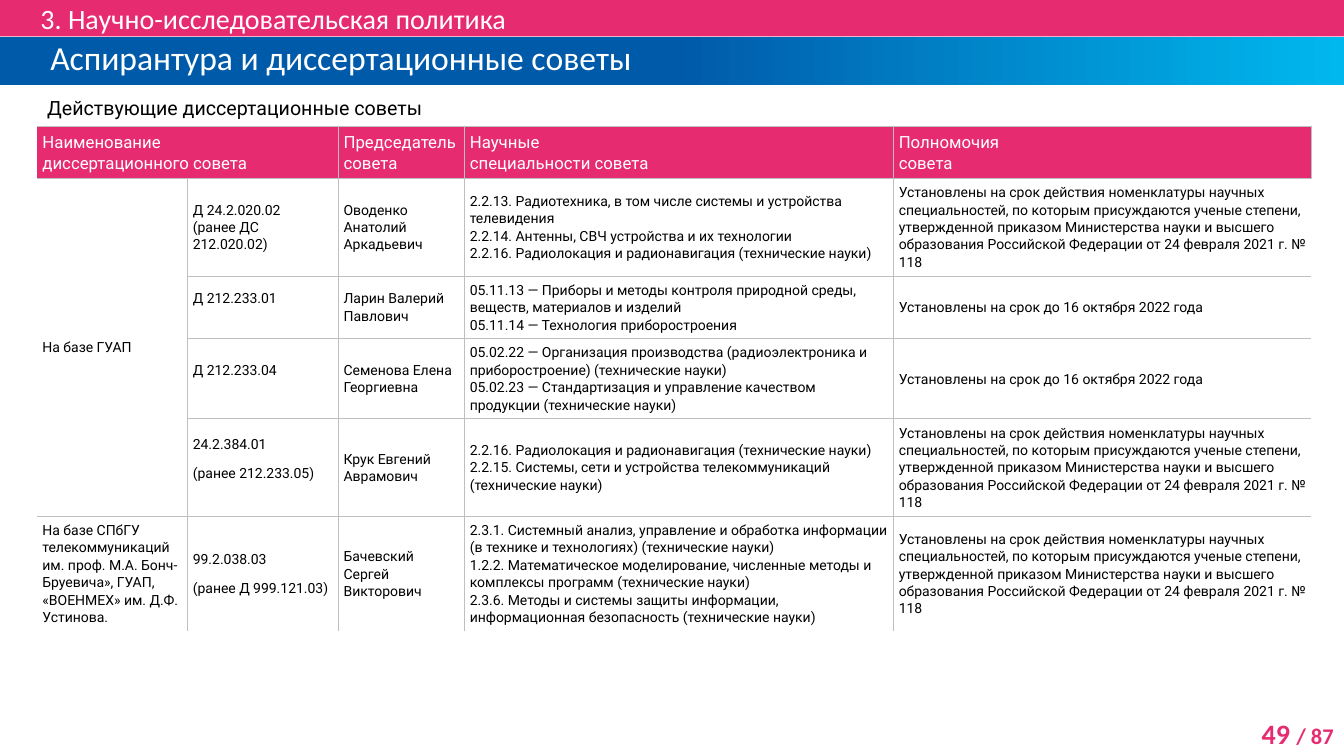
import copy
import pptx
import pptx.dml.color
import pptx.enum.shapes
import pptx.enum.text
import pptx.oxml
import pptx.oxml.ns
import pptx.util
from pptx.util import Cm, Pt


class Theme:
    pink, blue, sky = "E72B70", "005AAA", "00B8EE"
    white, black, grid = "FFFFFF", "000000", "BFBFBF"
    heading, body = "Calibri", "Roboto"
    title, section, total, caption, header, cell = 24, 20, 16, 14, 12, 10


rgb = pptx.dml.color.RGBColor.from_string
qn = pptx.oxml.ns.qn
MIDDLE = pptx.enum.text.MSO_ANCHOR.MIDDLE
ALIGN = pptx.enum.text.PP_ALIGN


def add_run(p, text, size, color, font, bold=False):
    r = p.add_run()
    r.text = text
    r.font.size, r.font.name, r.font.bold = Pt(size), font, bold
    r.font.color.rgb = rgb(color)


def add_border(tc_pr, side, position):
    ns = pptx.oxml.ns.nsdecls("a")
    tc_pr.insert(position, pptx.oxml.parse_xml(
        f'<a:ln{side} {ns} w="{Pt(0.5)}"><a:solidFill><a:srgbClr val="{Theme.grid}"/>'
        f'</a:solidFill></a:ln{side}>'))


prs = pptx.Presentation()
prs.slide_width, prs.slide_height = Cm(33.87), Cm(19.05)
s = prs.slides.add_slide(prs.slide_layouts[5])

# Section bar
sp = s.shapes.add_shape(pptx.enum.shapes.MSO_SHAPE.RECTANGLE, 0, 0, prs.slide_width, Cm(0.92))
sp.shadow.inherit = False
sp.fill.solid()
sp.fill.fore_color.rgb = rgb(Theme.pink)
sp.line.fill.background()
tf = sp.text_frame
tf.word_wrap, tf.vertical_anchor = True, MIDDLE
tf.margin_left, tf.margin_right, tf.margin_top, tf.margin_bottom = Cm(1.02), 0, 0, 0
p = tf.paragraphs[0]
p.alignment = ALIGN.LEFT
add_run(p, "3. Научно-исследовательская политика", Theme.section, Theme.white, Theme.heading)

# Title on a gradient bar: solid blue up to the middle, then to sky blue
sp = s.shapes.title
sp.left, sp.top, sp.width, sp.height = 0, Cm(0.92), prs.slide_width, Cm(1.23)
sp.fill.gradient()
sp.fill.gradient_angle = 0
for stop, color in zip(sp.fill.gradient_stops, (Theme.blue, Theme.sky)):
    stop.color.rgb = rgb(color)
stops = sp._element.spPr.find(".//" + qn("a:gsLst"))
stops.insert(1, copy.deepcopy(stops[0]))
stops[1].set("pos", "50000")
tf = sp.text_frame
tf.auto_size = pptx.enum.text.MSO_AUTO_SIZE.NONE
tf.word_wrap, tf.vertical_anchor = True, MIDDLE
tf.margin_left, tf.margin_right, tf.margin_top, tf.margin_bottom = Cm(1.27), Cm(0.25), 0, 0
p = tf.paragraphs[0]
p.alignment, p.line_spacing = ALIGN.LEFT, Pt(24)
add_run(p, "Аспирантура и диссертационные советы", Theme.title, Theme.white, Theme.heading)

# Table content: \n starts a paragraph, \v breaks a line
by_order = ("Установлены на срок действия номенклатуры научных специальностей, по которым "
            "присуждаются ученые степени, утвержденной приказом Министерства науки и высшего "
            "образования Российской Федерации от 24 февраля 2021 г. № 118")
by_date = "Установлены на срок до 16 октября 2022 года"
rows = [
    ["Действующие диссертационные советы", "", "", "", ""],
    ["Наименование \vдиссертационного совета", "", "Председатель совета",
     "Научные \vспециальности совета", "Полномочия \vсовета"],
    ["На базе ГУАП", "Д 24.2.020.02\n(ранее ДC 212.020.02)", "Оводенко Анатолий Аркадьевич",
     "2.2.13. Радиотехника, в том числе системы и устройства телевидения\n"
     "2.2.14. Антенны, СВЧ устройства и их технологии\n"
     "2.2.16. Радиолокация и радионавигация (технические науки)", by_order],
    ["", "Д 212.233.01", "Ларин Валерий Павлович",
     "05.11.13 — Приборы и методы контроля природной среды, веществ, материалов и изделий\n"
     "05.11.14 — Технология приборостроения", by_date],
    ["", "Д 212.233.04", "Семенова Елена Георгиевна",
     "05.02.22 — Организация производства (радиоэлектроника и приборостроение) "
     "(технические науки)\n"
     "05.02.23 — Стандартизация и управление качеством продукции (технические науки)", by_date],
    ["", "24.2.384.01\n(ранее 212.233.05)", "Крук Евгений Аврамович",
     "2.2.16. Радиолокация и радионавигация (технические науки)\n"
     "2.2.15. Системы, сети и устройства телекоммуникаций (технические науки)", by_order],
    ["На базе СПбГУ телекоммуникаций им. проф. М.А. Бонч-Бруевича», ГУАП, "
     "«ВОЕНМЕХ» им. Д.Ф. Устинова.",
     "99.2.038.03\n(ранее Д 999.121.03)", "Бачевский Сергей Викторович",
     "2.3.1. Системный анализ, управление и обработка информации (в технике и технологиях) "
     "(технические науки)\n"
     "1.2.2. Математическое моделирование, численные методы и комплексы программ "
     "(технические науки)\n"
     "2.3.6. Методы и системы защиты информации, информационная безопасность "
     "(технические науки)", by_order],
]
col_widths = [3.79, 3.8, 3.18, 10.81, 10.52]
row_heights = [0.87, 1.32, 2.44, 1.58, 2.02, 2.44, 2.89]
last_row, last_col = len(rows) - 1, len(col_widths) - 1

# Table grid
tbl = s.shapes.add_table(len(rows), len(col_widths), Cm(0.94), Cm(2.29),
                         Cm(sum(col_widths)), Cm(sum(row_heights))).table
tbl.first_row = tbl.horz_banding = False
# Built-in style without fills or grid
tbl._tbl.tblPr.find(qn("a:tableStyleId")).text = "{2D5ABB26-0587-4C30-8999-92F81FD0307C}"
for column, width in zip(tbl.columns, col_widths):
    column.width = Cm(width)
for row, height in zip(tbl.rows, row_heights):
    row.height = Cm(height)
for first, last in [((0, 0), (0, 4)), ((1, 0), (1, 1)), ((2, 0), (5, 0))]:
    tbl.cell(*first).merge(tbl.cell(*last))

# Table cells
for i, row in enumerate(rows):
    for j, text in enumerate(row):
        c = tbl.cell(i, j)
        if c.is_spanned:
            continue
        size = {0: Theme.caption, 1: Theme.header}.get(i, Theme.cell)
        color = Theme.white if i == 1 else Theme.black
        c.vertical_anchor = MIDDLE
        c.margin_left = c.margin_right = Cm(0.25 if i == 0 else 0.13)
        c.margin_top = c.margin_bottom = Cm(0.13)
        if j == 1 and i in (3, 4, 5):  # codes set half a line above the middle
            c.margin_bottom = Cm(0.57)
        if i == 1:
            c.fill.solid()
            c.fill.fore_color.rgb = rgb(Theme.pink)
        else:
            c.fill.background()
        for k, line in enumerate(text.split("\n")):
            p = c.text_frame.paragraphs[0] if k == 0 else c.text_frame.add_paragraph()
            p.line_spacing = 1.07
            if k and j == 1 and i >= 5:
                p.space_before = Pt(8)
            for n, part in enumerate(line.split("\v")):
                if n:
                    p.add_line_break()
                add_run(p, part, size, color, Theme.body)
        # Inner edges only
        right, bottom = j + c.span_width - 1, i + c.span_height - 1
        inner = {"L": j > 0, "R": right < last_col, "T": i > 0, "B": bottom < last_row}
        for position, side in enumerate(side for side in inner if inner[side]):
            add_border(c._tc.get_or_add_tcPr(), side, position)

# Page number
tf = s.shapes.add_textbox(Cm(30.81), Cm(17.93), Cm(3.05), Cm(1.12)).text_frame
tf.word_wrap = True
p = tf.paragraphs[0]
p.alignment = ALIGN.RIGHT
add_run(p, "49 ", Theme.section, Theme.pink, Theme.heading, True)
add_run(p, "/ 87", Theme.total, Theme.pink, Theme.heading, True)

prs.save("out.pptx")
